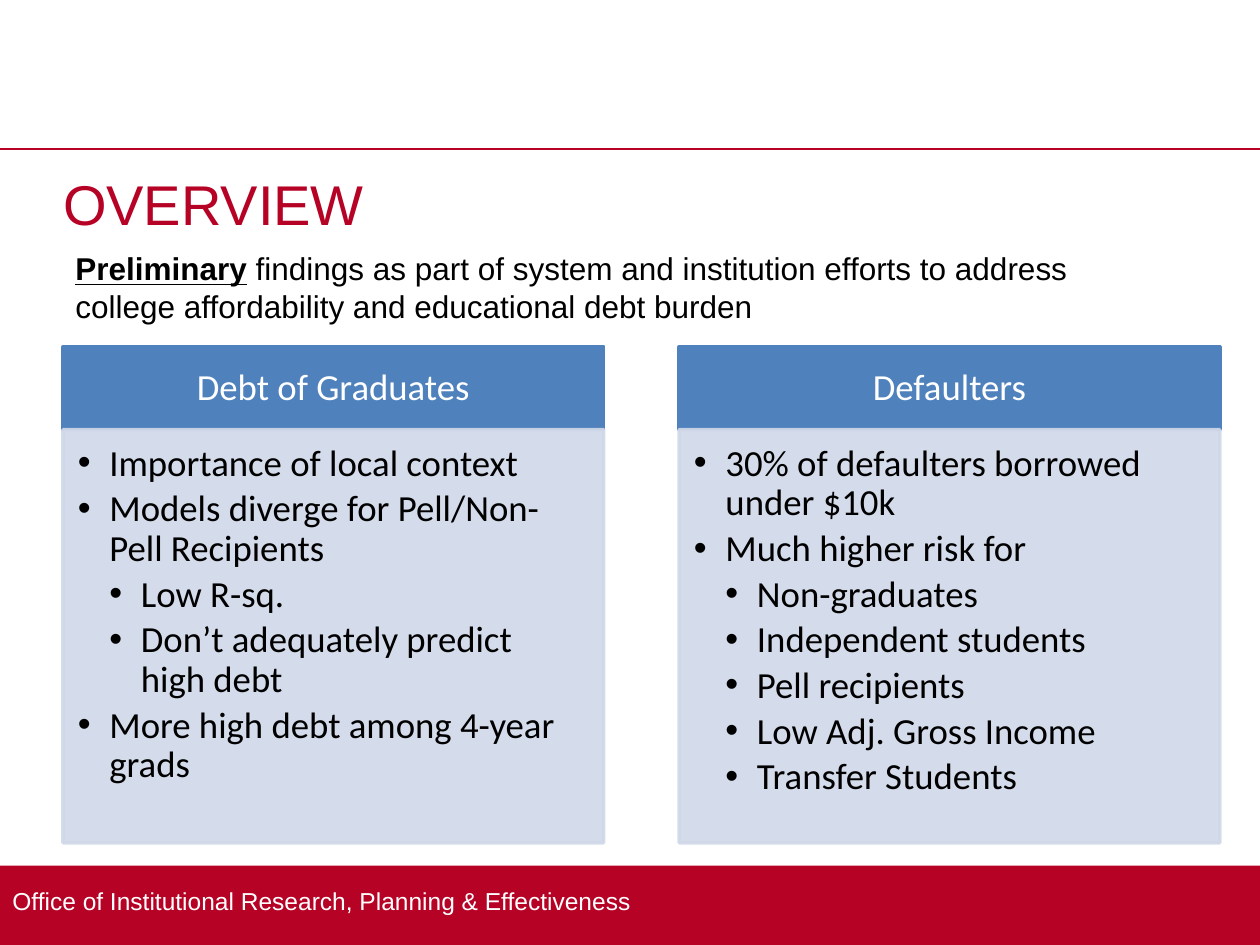
from dataclasses import dataclass

from lxml.etree import SubElement
from pptx import Presentation
from pptx.dml.color import RGBColor
from pptx.enum.shapes import MSO_CONNECTOR, MSO_SHAPE
from pptx.enum.text import MSO_ANCHOR, MSO_AUTO_SIZE, PP_ALIGN
from pptx.oxml.ns import qn
from pptx.util import Cm, Pt


@dataclass(frozen=True)
class Theme:
    red: RGBColor = RGBColor(0xB6, 0x02, 0x25)
    blue: RGBColor = RGBColor(0x4F, 0x81, 0xBD)
    pale: RGBColor = RGBColor(0xD0, 0xD8, 0xE8)
    white: RGBColor = RGBColor(0xFF, 0xFF, 0xFF)
    black: RGBColor = RGBColor(0, 0, 0)
    sans: str = "Arial"
    card: str = "Calibri"
    title: int = 32
    list: int = 21
    lead: int = 18
    foot: int = 14


THEME = Theme()
WIDE, HIGH = 25.4, 19.05
LEFT, STEP, CARD = 1.27, 12.42, 10.9
HEAD_TOP, HEAD_HIGH, LIST_HIGH = 6.99, 1.67, 8.33

CARDS = [
    ("Debt of Graduates", [
        (0, "Importance of local context"),
        (0, "Models diverge for Pell/Non-Pell Recipients"),
        (1, "Low R-sq."),
        (1, "Don’t adequately predict high debt"),
        (0, "More high debt among 4-year grads"),
    ]),
    ("Defaulters", [
        (0, "30% of defaulters borrowed under $10k"),
        (0, "Much higher risk for"),
        (1, "Non-graduates"),
        (1, "Independent students"),
        (1, "Pell recipients"),
        (1, "Low Adj. Gross Income"),
        (1, "Transfer Students"),
    ]),
]


def place(shape, left, top, width, height):
    shape.left, shape.top = Cm(left), Cm(top)
    shape.width, shape.height = Cm(width), Cm(height)


def frame(shape, pads, anchor=MSO_ANCHOR.TOP):
    """Set wrap, anchor and insets (left, top, right, bottom in cm)."""
    text = shape.text_frame
    text.word_wrap = True
    text.auto_size = MSO_AUTO_SIZE.NONE
    text.vertical_anchor = anchor
    text.margin_left, text.margin_top, text.margin_right, text.margin_bottom = map(Cm, pads)
    return text


def style(para, face, size, color, align=PP_ALIGN.LEFT):
    para.alignment = align
    para.space_before = Pt(0)
    font = para.font
    font.name, font.size, font.bold = face, Pt(size), False
    font.color.rgb = color


def paint(shape, color, alpha=100):
    """Give fill and outline one colour, with opacity in percent."""
    shape.fill.solid()
    shape.fill.fore_color.rgb = color
    shape.line.color.rgb = color
    shape.line.width = Pt(2)
    if alpha < 100:
        for node in shape.element.spPr.iter(qn("a:srgbClr")):
            SubElement(node, qn("a:alpha"), val=str(alpha * 1000))


def bullet(para, level):
    para.level = level
    props = para._p.get_or_add_pPr()
    props.set("marL", str(Cm(0.635 * (level + 1))))
    props.set("indent", str(-Cm(0.635)))
    SubElement(props, qn("a:buChar"), char="•")


def add_rule(slide):
    rule = slide.shapes.add_connector(MSO_CONNECTOR.STRAIGHT, 0, Cm(3), Cm(WIDE), Cm(3))
    rule.line.color.rgb = THEME.red
    rule.line.width = Pt(1)
    SubElement(rule.element.spPr, qn("a:effectLst"))


def add_foot(slide):
    top = 17.45
    bar = slide.shapes.add_shape(MSO_SHAPE.RECTANGLE, 0, Cm(top), Cm(WIDE), Cm(HIGH - top))
    bar.shadow.inherit = False
    bar.fill.solid()
    bar.fill.fore_color.rgb = THEME.red
    bar.line.fill.background()
    text = frame(bar, (0.25, 0.13, 0.25, 0.3), MSO_ANCHOR.MIDDLE)
    text.text = "Office of Institutional Research, Planning & Effectiveness"
    style(text.paragraphs[0], THEME.sans, THEME.foot, THEME.white)


def add_title(slide):
    title = slide.shapes.title
    place(title, LEFT, 3.28, 22.86, 2.2)
    text = frame(title, (0, 0.13, 0, 0.13))
    text.text = "OVERVIEW"
    style(text.paragraphs[0], THEME.sans, THEME.title, THEME.red)


def add_lead(slide):
    box = slide.shapes.add_textbox(Cm(LEFT), Cm(4.9), Cm(22.86), Cm(1.8))
    para = frame(box, (0.25, 0.13, 0.25, 0.13)).paragraphs[0]
    style(para, THEME.sans, THEME.lead, THEME.black)
    key = para.add_run()
    key.text = "Preliminary"
    key.font.bold = key.font.underline = True
    para.add_run().text = " findings as part of system and institution efforts to address"
    para.add_line_break()
    para.add_run().text = "college affordability and educational debt burden"


def fill_head(shape, left, words):
    place(shape, left, HEAD_TOP, CARD, HEAD_HIGH)
    paint(shape, THEME.blue)
    text = frame(shape, (0.4, 0.23, 0.4, 0.23), MSO_ANCHOR.MIDDLE)
    text.text = words
    para = text.paragraphs[0]
    para.line_spacing = 0.9
    style(para, THEME.card, THEME.list, THEME.white, PP_ALIGN.CENTER)


def fill_list(shape, left, items):
    place(shape, left, HEAD_TOP + HEAD_HIGH, CARD, LIST_HIGH)
    paint(shape, THEME.pale, 90)
    text = frame(shape, (0.3, 0.3, 0.4, 0.45))
    text.text = "\n".join(words for _, words in items)
    for para, (level, _) in zip(text.paragraphs, items):
        bullet(para, level)
        para.line_spacing = 0.9
        para.space_after = Pt(3.4)
        style(para, THEME.card, THEME.list, THEME.black)


def main():
    deck = Presentation()
    deck.slide_width, deck.slide_height = Cm(WIDE), Cm(HIGH)
    slide = deck.slides.add_slide(deck.slide_layouts.get_by_name("Comparison"))
    add_rule(slide)
    add_foot(slide)
    add_title(slide)
    holds = slide.placeholders
    for col, (head, items) in enumerate(CARDS):
        left = LEFT + col * STEP
        fill_head(holds[2 * col + 1], left, head)
        fill_list(holds[2 * col + 2], left, items)
    add_lead(slide)
    deck.save("out.pptx")


if __name__ == "__main__":
    main()
